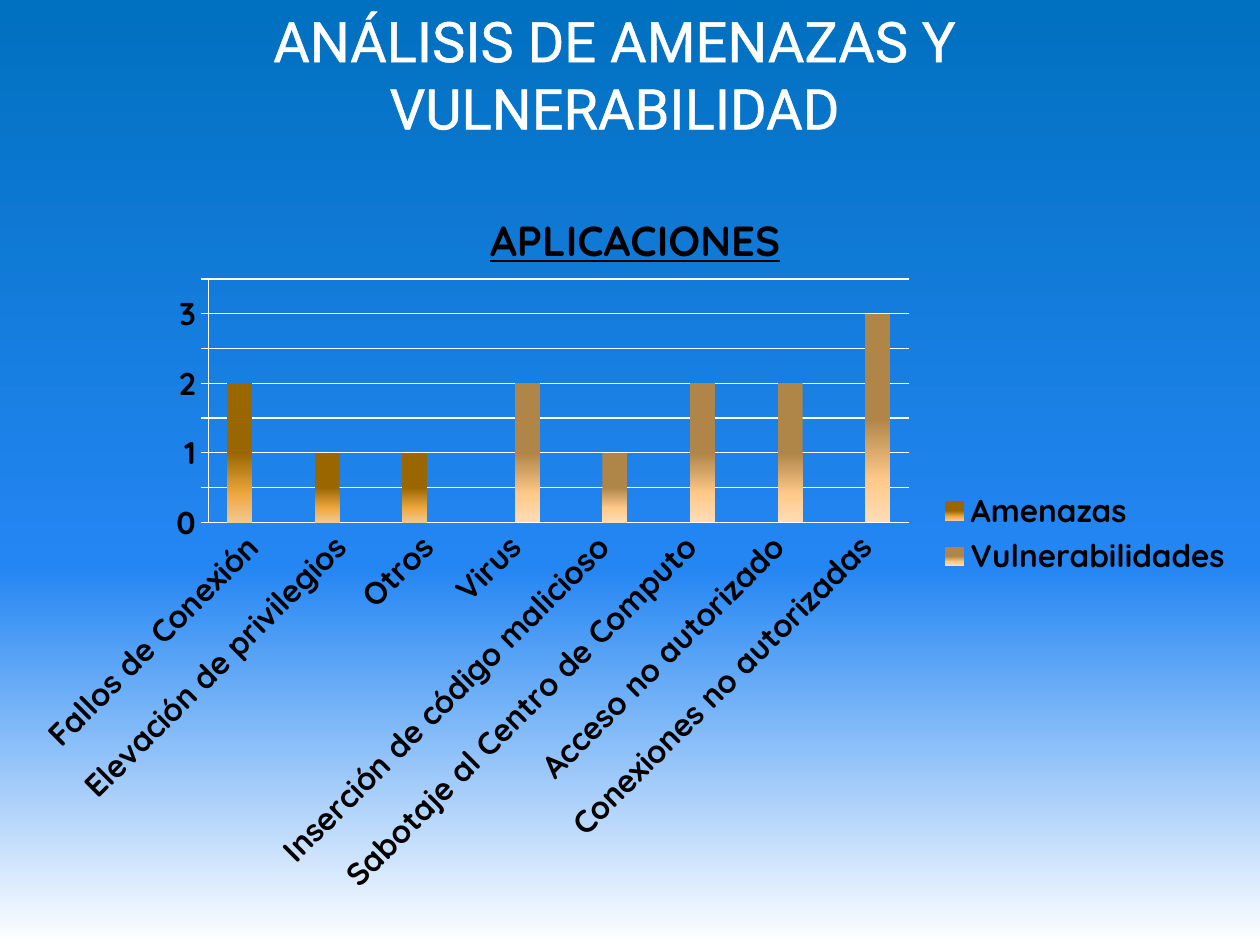
import pptx
import pptx.chart.data
import pptx.dml.color
import pptx.enum.chart
import pptx.enum.text
import pptx.oxml
import pptx.oxml.ns
import pptx.util
from pptx.util import Inches

CATS = ["Fallos de Conexión", "Elevación de privilegios", "Otros", "Virus",
        "Inserción de código malicioso", "Sabotaje al Centro de Computo",
        "Acceso no autorizado", "Conexiones no autorizadas"]
SERIES = {
    "Amenazas": ([2, 1, 1] + [None] * 5,
                 [(0, "996600"), (50, "996600"), (80, "F0A840"), (100, "F3C890")]),
    "Vulnerabilidades": ([None] * 3 + [2, 1, 2, 2, 3],
                         [(0, "B08548"), (50, "B08548"), (80, "FFC98A"), (100, "FFDDB5")]),
}


def tint(code):
    """Return the colour for a hex string."""
    return pptx.dml.color.RGBColor.from_string(code)


def style(item, values):
    """Set each attribute of an item from a dict."""
    for name, value in values.items():
        setattr(item, name, value)


def write(font, code, size, **more):
    """Set the colour, size and further values of a font."""
    style(font, {"size": pptx.util.Pt(size), **more})
    font.color.rgb = tint(code)


def stroke(line, code, width):
    """Give a line a solid colour and a width."""
    line.fill.solid()
    line.fill.fore_color.rgb = tint(code)
    line.width = pptx.util.Pt(width)


def blend(fill, owner, stops):
    """Fill with a gradient that runs from top to bottom."""
    fill.gradient()
    old = next(owner.iter(pptx.oxml.ns.qn("a:gradFill")))
    marks = "".join(f'<a:gs pos="{pos * 1000}"><a:srgbClr val="{code}"/></a:gs>'
                    for pos, code in stops)
    new = pptx.oxml.parse_xml(
        f'<a:gradFill {pptx.oxml.ns.nsdecls("a")} rotWithShape="1"><a:gsLst>{marks}</a:gsLst>'
        '<a:lin ang="5400000" scaled="0"/></a:gradFill>')
    old.getparent().replace(old, new)


def place(node, index, **spots):
    """Give a chart part a manual layout in fractions of the chart."""
    for old in node.findall(pptx.oxml.ns.qn("c:layout")):
        node.remove(old)
    inner = '<c:layoutTarget val="inner"/>' if index == 0 else ""
    modes = "".join(f'<c:{key}Mode val="edge"/>' for key in "xy")
    sizes = "".join(f'<c:{key} val="{value}"/>' for key, value in spots.items())
    node.insert(index, pptx.oxml.parse_xml(
        f'<c:layout {pptx.oxml.ns.nsdecls("c")}><c:manualLayout>{inner}{modes}{sizes}'
        '</c:manualLayout></c:layout>'))


def heading(slide, box):
    """Add the slide heading in white outlined text."""
    frame = slide.shapes.add_textbox(*box).text_frame
    style(frame, {"word_wrap": True,
                  "auto_size": pptx.enum.text.MSO_AUTO_SIZE.SHAPE_TO_FIT_TEXT})
    para = frame.paragraphs[0]
    para.alignment = pptx.enum.text.PP_ALIGN.CENTER
    run = para.add_run()
    run.text = "ANÁLISIS DE AMENAZAS Y VULNERABILIDAD"
    write(run.font, "FFFFFF", 32, name="Roboto")
    run.font._element.insert(0, pptx.oxml.parse_xml(
        f'<a:ln {pptx.oxml.ns.nsdecls("a")} w="{pptx.util.Pt(1.45)}"><a:solidFill>'
        '<a:srgbClr val="FFFFFF"/></a:solidFill></a:ln>'))


def axes(chart):
    """Format both axes and the gridlines."""
    ticks = pptx.enum.chart.XL_TICK_MARK
    cat, val = chart.category_axis, chart.value_axis
    style(cat, {"major_tick_mark": ticks.NONE, "minor_tick_mark": ticks.NONE})
    style(val, {"major_tick_mark": ticks.OUTSIDE, "minor_tick_mark": ticks.NONE,
                "minimum_scale": 0, "maximum_scale": 3.5, "major_unit": 0.5,
                "has_major_gridlines": True})
    for axis in (cat, val):
        write(axis.tick_labels.font, "000000", 18, name="Quicksand", bold=True)
        stroke(axis.format.line, "FFFFFF", 0.75)
    stroke(val.major_gridlines.format.line, "FFFFFF", 0.75)
    cat._element.find(pptx.oxml.ns.qn("c:txPr"))[0].set("rot", "-2700000")


def graph(slide, box):
    """Add the column chart of threats and vulnerabilities."""
    data = pptx.chart.data.CategoryChartData()
    data.categories = CATS
    for name, (values, _) in SERIES.items():
        data.add_series(name, values)
    kind = pptx.enum.chart.XL_CHART_TYPE.COLUMN_CLUSTERED
    chart = slide.shapes.add_chart(kind, *box, data).chart
    style(chart, {"has_title": True, "has_legend": True})
    write(chart.font, "000000", 18, name="Quicksand", bold=True)

    run = chart.chart_title.text_frame.paragraphs[0].add_run()
    run.text = "APLICACIONES"
    write(run.font, "000000", 24, name="Quicksand", bold=True, underline=True)
    place(chart.chart_title._element, 1, x=0.38, y=0.05)

    style(chart.legend, {"position": pptx.enum.chart.XL_LEGEND_POSITION.RIGHT,
                         "include_in_layout": False})
    write(chart.legend.font, "000000", 18, name="Quicksand", bold=True)
    place(chart.legend._element, 1, x=0.75, y=0.43, w=0.24, h=0.13)

    plot = chart.plots[0]
    style(plot, {"gap_width": 150, "overlap": 0, "vary_by_categories": False})
    place(plot._element.getparent(), 0, x=0.157, y=0.153, w=0.57, h=0.327)
    for series in plot.series:
        blend(series.format.fill, series._element, SERIES[series.name][1])
    axes(chart)


def main():
    """Build the slide and save it."""
    deck = pptx.Presentation()
    style(deck, {"slide_width": Inches(10), "slide_height": Inches(7.5)})
    slide = deck.slides.add_slide(deck.slide_layouts[6])
    blend(slide.background.fill, slide._element,
          [(0, "0070C0"), (60, "2486F3"), (100, "FFFFFF")])
    heading(slide, [Inches(n) for n in (0.39, 0, 8.98, 1.18)])
    graph(slide, [Inches(n) for n in (0.12, 1.31, 9.76, 5.91)])
    deck.save("out.pptx")


if __name__ == "__main__":
    main()
